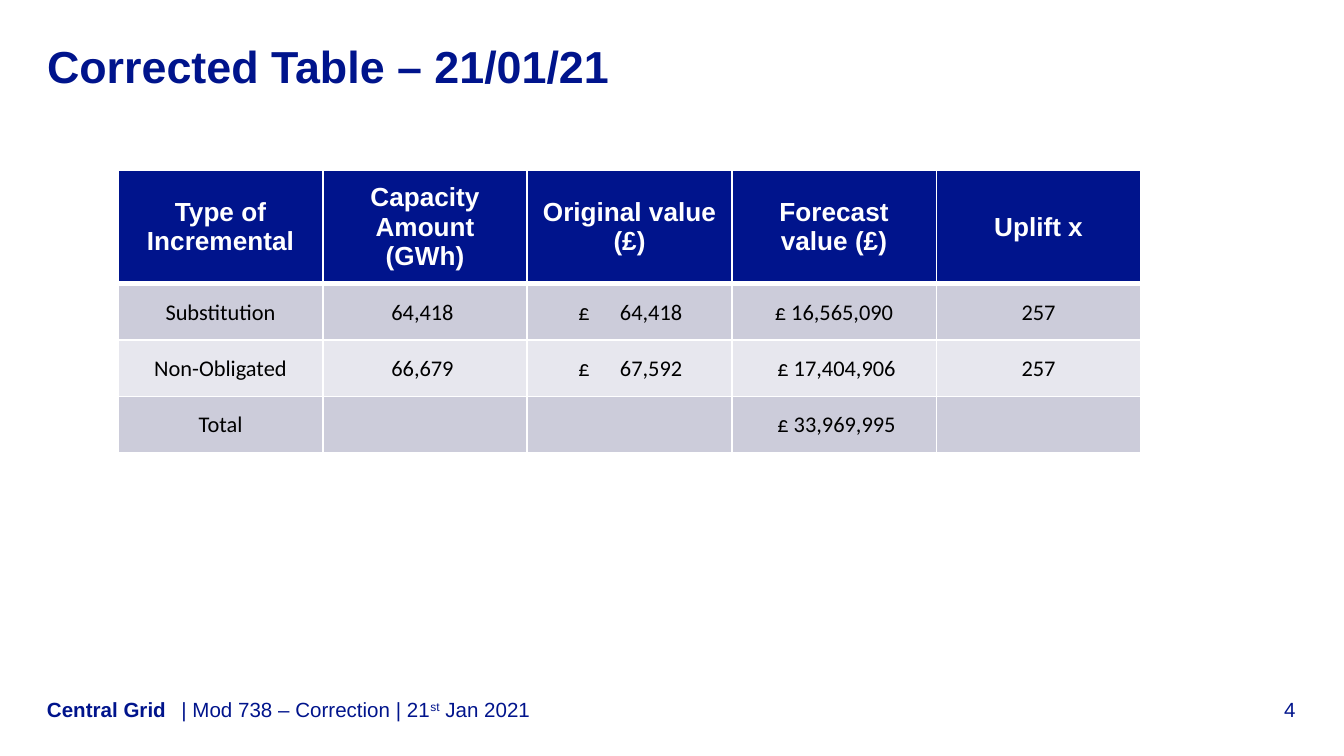
from pptx import Presentation
from pptx.dml.color import RGBColor
from pptx.enum.text import MSO_ANCHOR as Anchor, PP_ALIGN as Align
from pptx.oxml.ns import qn
from pptx.util import Inches, Pt
from lxml.etree import SubElement

COLORS = {"navy": "00148C", "white": "FFFFFF", "black": "000000",
          "band_dark": "CCCCDA", "band_light": "E7E7EE"}
HEADERS = ["Type of Incremental", "Capacity Amount (GWh)", "Original value (£)",
           "Forecast value (£)", "Uplift x"]
ROWS = [
    ["Substitution", "64,418 ", "£\t64,418", " £ 16,565,090 ", "257"],
    ["Non-Obligated", "66,679 ", "£\t67,592", " £ 17,404,906", "257"],
    ["Total", "", "", " £ 33,969,995", ""],
]


def color(name):
    return RGBColor.from_string(COLORS[name])


def write(frame, *parts, size=11, font="Arial", ink="navy", bold=False,
          align=Align.LEFT, after=0, tab=None):
    para = frame.paragraphs[0]
    para.alignment = align
    para.space_after = Pt(after)
    if tab:
        stops = SubElement(para._p.get_or_add_pPr(), qn("a:tabLst"))
        SubElement(stops, qn("a:tab"), pos=str(Inches(tab)), algn="l")
    for part in parts:
        text, raised = part if isinstance(part, tuple) else (part, False)
        span = para.add_run()
        span.text = text
        span.font.size = Pt(size)
        span.font.name = font
        span.font.bold = bold
        span.font.color.rgb = color(ink)
        if raised:
            span.font._element.set("baseline", "30000")


def set_frame(frame, anchor):
    frame.word_wrap = True
    frame.vertical_anchor = anchor
    frame.margin_left = frame.margin_right = 0
    frame.margin_top = frame.margin_bottom = 0


def add_title(page, left, top, width, height):
    title = page.shapes.title
    title.left, title.top = Inches(left), Inches(top)
    title.width, title.height = Inches(width), Inches(height)
    set_frame(title.text_frame, Anchor.TOP)
    write(title.text_frame, "Corrected Table – 21/01/21", size=24, bold=True)


def add_footer(page, left, top, width, height):
    name_width, number_width = 1, 0.58
    items = [
        (0, name_width, ["Central Grid"], {"bold": True}),
        (name_width, 7.87, ["| Mod 738 – Correction | 21", ("st", True), " Jan 2021"],
         {"after": 6}),
        (width - number_width, number_width, ["4"], {"align": Align.RIGHT}),
    ]
    for offset, item_width, parts, style in items:
        box = page.shapes.add_textbox(Inches(left + offset), Inches(top),
                                      Inches(item_width), Inches(height))
        set_frame(box.text_frame, Anchor.BOTTOM)
        write(box.text_frame, *parts, **style)


def set_borders(cell, top, bottom):
    properties = cell._tc.get_or_add_tcPr()
    for side, points in {"L": 1, "R": 1, "T": top, "B": bottom}.items():
        line = SubElement(properties, qn(f"a:ln{side}"), w=str(Pt(points)))
        fill = SubElement(line, qn("a:solidFill"))
        SubElement(fill, qn("a:srgbClr"), val=COLORS["white"])


def fill_cell(cell, text, row):
    set_borders(cell, top=3 if row == 1 else 1, bottom=3 if row == 0 else 1)
    cell.vertical_anchor = Anchor.MIDDLE
    cell.fill.solid()
    if row == 0:
        cell.fill.fore_color.rgb = color("navy")
        write(cell.text_frame, text, size=14, ink="white", bold=True,
              align=Align.CENTER, after=6)
        return
    cell.fill.fore_color.rgb = color("band_dark" if row % 2 else "band_light")
    if not text:
        return
    split = "\t" in text
    cell.margin_left = Inches(0.38 if split else 0.01)
    cell.margin_right = cell.margin_top = Inches(0.01)
    cell.margin_bottom = 0
    write(cell.text_frame, text, size=12, font="Calibri", ink="black", after=6,
          align=Align.LEFT if split else Align.CENTER, tab=0.31 if split else None)


def add_value_table(page, left, top, width, height):
    lines = [HEADERS] + ROWS
    table = page.shapes.add_table(len(lines), len(HEADERS), Inches(left), Inches(top),
                                  Inches(width), Inches(height)).table
    unit = height / (len(lines) + 1)
    for column in table.columns:
        column.width = Inches(width / len(HEADERS))
    for row, values in enumerate(lines):
        table.rows[row].height = Inches(unit if row else 2 * unit)
        for column, text in enumerate(values):
            fill_cell(table.cell(row, column), text, row)


def main():
    deck = Presentation()
    deck.slide_width = Inches(10)
    deck.slide_height = Inches(10 * 9 / 16)
    page = deck.slides.add_slide(deck.slide_layouts[5])
    add_footer(page, 0.35, 5.18, 9.29, 0.19)
    add_title(page, 0.35, 0.29, 9.29, 0.49)
    add_value_table(page, 0.88, 1.27, 7.61, 2.1)
    deck.save("out.pptx")


if __name__ == "__main__":
    main()
